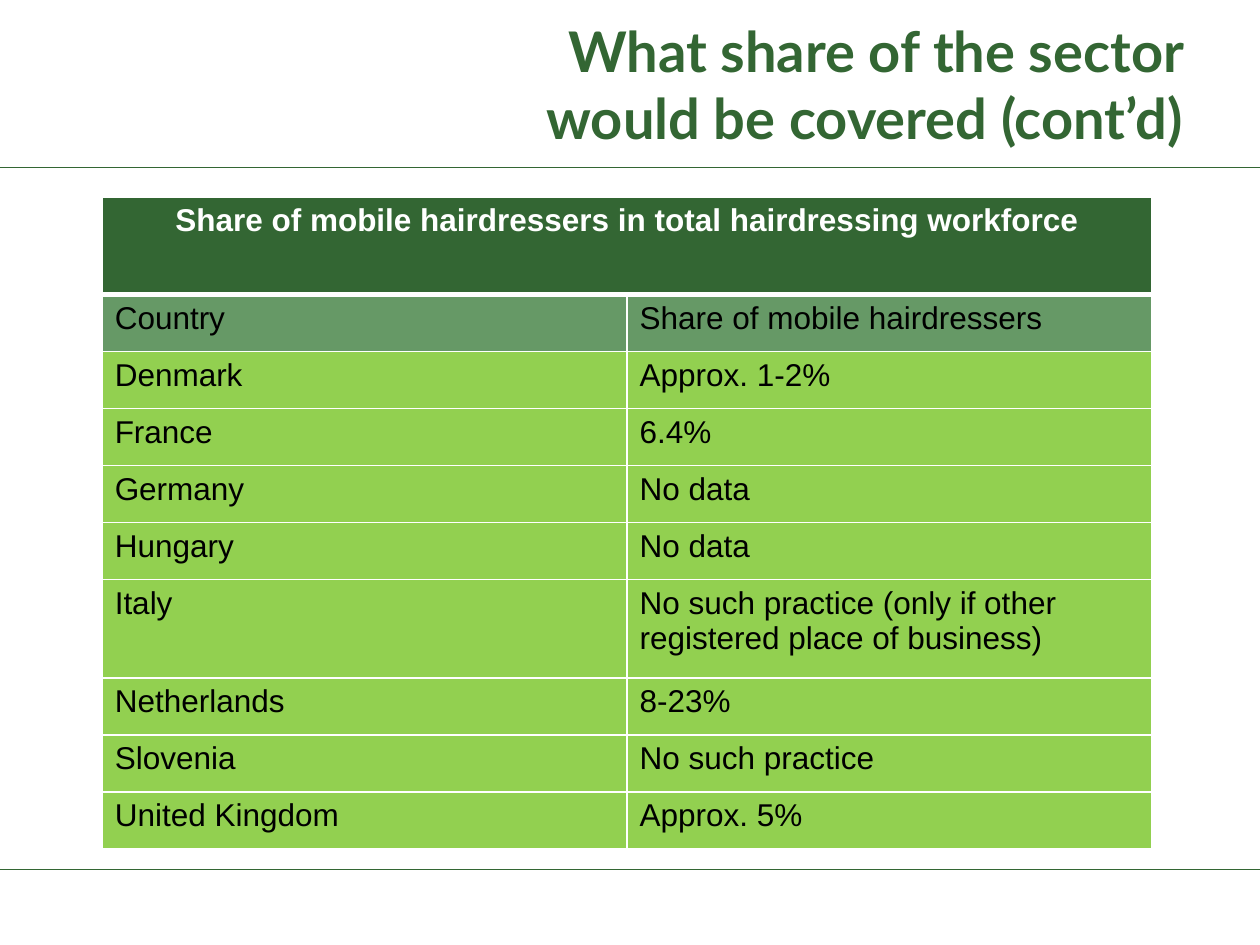
from lxml import etree
from pptx import Presentation
from pptx.dml.color import RGBColor
from pptx.enum.shapes import MSO_CONNECTOR
from pptx.enum.text import MSO_ANCHOR, PP_ALIGN
from pptx.oxml.ns import qn
from pptx.util import Cm, Pt

STRAIGHT = MSO_CONNECTOR.STRAIGHT
MIDDLE = MSO_ANCHOR.MIDDLE
LEFT, CENTER, RIGHT = PP_ALIGN.LEFT, PP_ALIGN.CENTER, PP_ALIGN.RIGHT
DARK_GREEN = RGBColor(0x33, 0x66, 0x33)
MID_GREEN = RGBColor(0x66, 0x99, 0x66)
LIME = RGBColor(0x92, 0xD0, 0x50)
WHITE = RGBColor(0xFF, 0xFF, 0xFF)
BLACK = RGBColor(0x00, 0x00, 0x00)


def write_text(frame, text, size=18, font="Arial", color=BLACK, bold=False, align=LEFT):
    para = frame.paragraphs[0]
    para.alignment = align
    span = para.add_run()
    span.text = text
    span.font.size = Pt(size)
    span.font.name = font
    span.font.color.rgb = color
    span.font.bold = bold


def style_cell(cell, fill, bottom=1, top=1):
    properties = cell._tc.get_or_add_tcPr()
    for side, width in (("L", 1), ("R", 1), ("T", top), ("B", bottom)):
        border = etree.SubElement(properties, qn(f"a:ln{side}"), w=str(Pt(width)))
        solid = etree.SubElement(border, qn("a:solidFill"))
        etree.SubElement(solid, qn("a:srgbClr"), val=str(WHITE))
    cell.fill.solid()
    cell.fill.fore_color.rgb = fill


deck = Presentation()
deck.slide_width = Cm(25.4)
deck.slide_height = Cm(19.05)
page = deck.slides.add_slide(deck.slide_layouts[6])

for y in (3.38, 17.53):
    rule = page.shapes.add_connector(STRAIGHT, 0, Cm(y), deck.slide_width, Cm(y))
    rule.line.color.rgb = DARK_GREEN
    rule.line.width = Pt(0.75)
    etree.SubElement(rule._element.spPr, qn("a:effectLst"))

title_box = page.shapes.add_textbox(Cm(8.74), Cm(0.43), Cm(15.37), Cm(2.51))
title_box.text_frame.word_wrap = True
title_box.text_frame.vertical_anchor = MIDDLE
write_text(title_box.text_frame, "What share of the sector would be covered (cont’d)",
           size=32, font="Lato", color=DARK_GREEN, bold=True, align=RIGHT)

rows = [
    ("Country", "Share of mobile hairdressers"),
    ("Denmark", "Approx. 1-2%"),
    ("France", "6.4%"),
    ("Germany", "No data"),
    ("Hungary", "No data"),
    ("Italy", "No such practice (only if other registered place of business)"),
    ("Netherlands", "8-23%"),
    ("Slovenia", "No such practice"),
    ("United Kingdom", "Approx. 5%"),
]
table = page.shapes.add_table(len(rows) + 1, 2, Cm(2.06), Cm(3.97), Cm(21.16), Cm(13.15)).table
for column in table.columns:
    column.width = Cm(10.58)

table.rows[0].height = Cm(1.97)
heading = table.cell(0, 0)
heading.merge(table.cell(0, 1))
for column in range(2):
    style_cell(table.cell(0, column), DARK_GREEN, bottom=3)
write_text(heading.text_frame, "Share of mobile hairdressers in total hairdressing workforce",
           color=WHITE, bold=True, align=CENTER)

for index, values in enumerate(rows, start=1):
    table.rows[index].height = Cm(1.98 if values[0] == "Italy" else 1.15)
    for column, value in enumerate(values):
        cell = table.cell(index, column)
        style_cell(cell, MID_GREEN if index == 1 else LIME, top=3 if index == 1 else 1)
        write_text(cell.text_frame, value)

deck.save("out.pptx")
